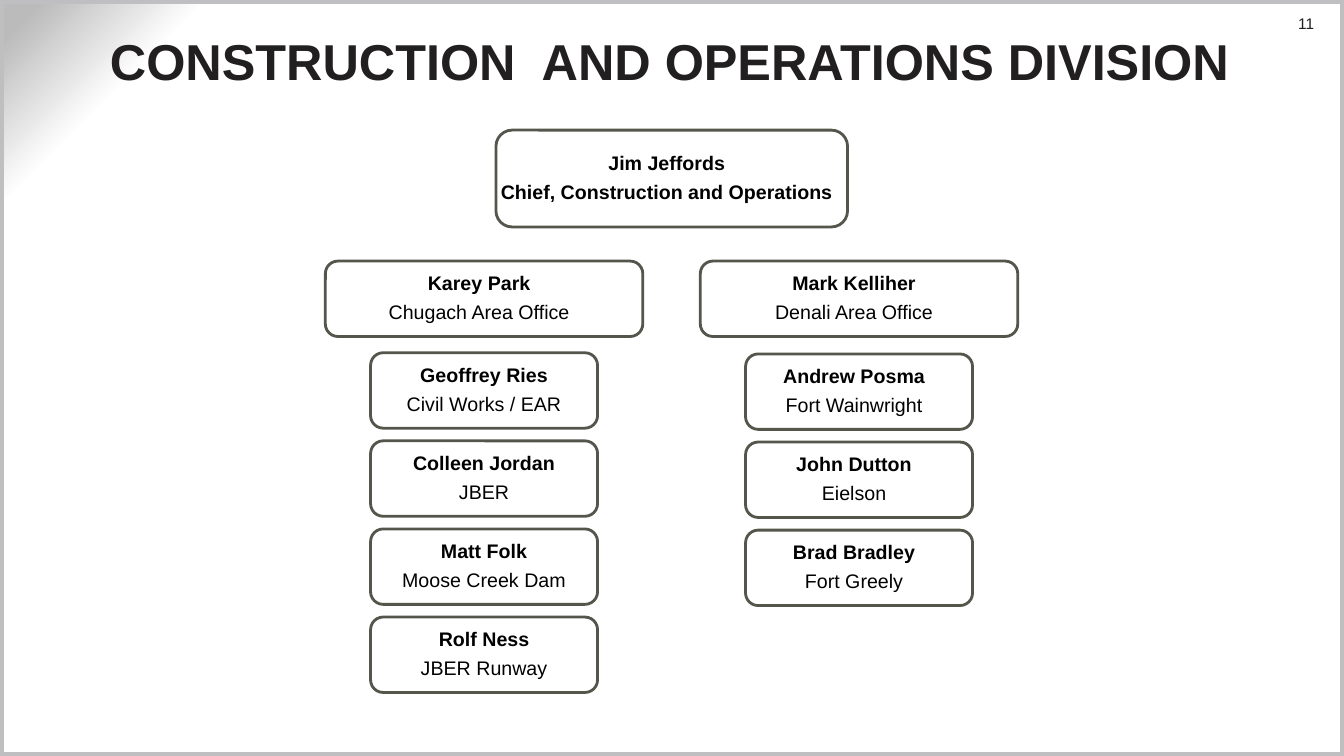
from lxml import etree
from pptx import Presentation
from pptx import util as u
from pptx.dml.color import RGBColor
from pptx.enum import shapes, text
from pptx.oxml.ns import qn

# Content
TITLE = "CONSTRUCTION  AND OPERATIONS DIVISION"
PAGE = "11"
CHIEF = ("Jim Jeffords", "Chief, Construction and Operations")
# Each office: left edge, top of first team, team insets, head, teams
OFFICES = [
    (8.2, 8.89, (0, 0), ("Karey Park", "Chugach Area Office"), [
        ("Geoffrey Ries", "Civil Works / EAR"),
        ("Colleen Jordan", "JBER"),
        ("Matt Folk", "Moose Creek Dam"),
        ("Rolf Ness", "JBER Runway"),
    ]),
    (17.65, 8.92, (0.25, 0.13), ("Mark Kelliher", "Denali Area Office"), [
        ("Andrew Posma", "Fort Wainwright"),
        ("John Dutton", "Eielson"),
        ("Brad Bradley", "Fort Greely"),
    ]),
]
COLORS = {"ink": "221F20", "text": "000000", "box": "54554B", "frame": "BFBFC2"}
STOPS = [(87, "FFFFFF"), (90, "FFFFFF"), (98, "BBBBBC")]
WIDE, HIGH = 33.87, 19.05
STEP, INDENT = 2.22, 1.14
INSETS = (0.25, 0.13)  # right, top and bottom


def color(name):
    return RGBColor.from_string(COLORS[name])


def style(para, size, name, bold=False):
    font = para.font
    font.name, font.size, font.bold = "Arial", u.Pt(size), bold
    font.color.rgb = color(name)


def margins(frame, left, top, right, bottom):
    frame.margin_left, frame.margin_top = u.Cm(left), u.Cm(top)
    frame.margin_right, frame.margin_bottom = u.Cm(right), u.Cm(bottom)


def outline(slide, kind, place, name, width):
    shape = slide.shapes.add_shape(kind, *map(u.Cm, place))
    shape.shadow.inherit = False
    shape.fill.background()
    shape.line.color.rgb = color(name)
    shape.line.width = u.Pt(width)
    return shape


def person(slide, place, lines, insets=INSETS, strong=False):
    kind = shapes.MSO_SHAPE.ROUNDED_RECTANGLE
    frame = outline(slide, kind, place, "box", 2).text_frame
    side, edge = insets
    margins(frame, 0, edge, side, edge)
    frame.word_wrap = True
    frame.vertical_anchor = text.MSO_ANCHOR.MIDDLE
    frame.text = "\n".join(lines)
    for i, para in enumerate(frame.paragraphs):
        para.alignment = text.PP_ALIGN.CENTER
        para.line_spacing = 0.9
        para.space_after = u.Pt(5.6)
        style(para, 14, "text", strong or i == 0)


def backdrop(slide):
    fill = slide.background.fill
    fill.gradient()
    grad = slide.element.find(".//" + qn("a:gradFill"))
    for child in list(grad):
        grad.remove(child)
    stops = etree.SubElement(grad, qn("a:gsLst"))
    for pos, tone in STOPS:
        stop = etree.SubElement(stops, qn("a:gs"), pos=str(pos * 1000))
        etree.SubElement(stop, qn("a:srgbClr"), val=tone)
    way = etree.SubElement(grad, qn("a:path"), path="circle")
    etree.SubElement(way, qn("a:fillToRect"), l="100000", t="100000")


def main():
    deck = Presentation()
    deck.slide_width, deck.slide_height = u.Cm(WIDE), u.Cm(HIGH)
    slide = deck.slides.add_slide(deck.slide_layouts[5])
    backdrop(slide)

    # Page number and frame
    box = slide.shapes.add_textbox(*map(u.Cm, (31.6, 0.36, 1.52, 0.48)))
    frame = box.text_frame
    margins(frame, 0.25, 0, 0, 0)
    frame.word_wrap = True
    frame.text = PAGE
    frame.paragraphs[0].alignment = text.PP_ALIGN.RIGHT
    style(frame.paragraphs[0], 11, "ink")
    outline(slide, shapes.MSO_SHAPE.RECTANGLE, (0, 0, WIDE, HIGH), "frame", 6)

    # Title
    title = slide.shapes.title
    title.left, title.top = u.Cm(2.64), u.Cm(0.36)
    title.width, title.height = u.Cm(28.85), u.Cm(2.31)
    frame = title.text_frame
    margins(frame, 0.13, 0, 0.13, 0)
    frame.word_wrap = True
    frame.auto_size = text.MSO_AUTO_SIZE.NONE
    frame.vertical_anchor = text.MSO_ANCHOR.MIDDLE
    frame.text = TITLE
    frame.paragraphs[0].alignment = text.PP_ALIGN.LEFT
    style(frame.paragraphs[0], 36, "ink", True)

    # Chief, then one column per office
    person(slide, (12.5, 3.28, 8.86, 2.44), CHIEF, strong=True)
    for left, top, insets, head, teams in OFFICES:
        person(slide, (left, 6.58, 8, 1.9), head)
        for i, team in enumerate(teams):
            place = (left + INDENT, top + i * STEP, 5.72, 1.9)
            person(slide, place, team, insets)

    deck.save("out.pptx")


if __name__ == "__main__":
    main()
